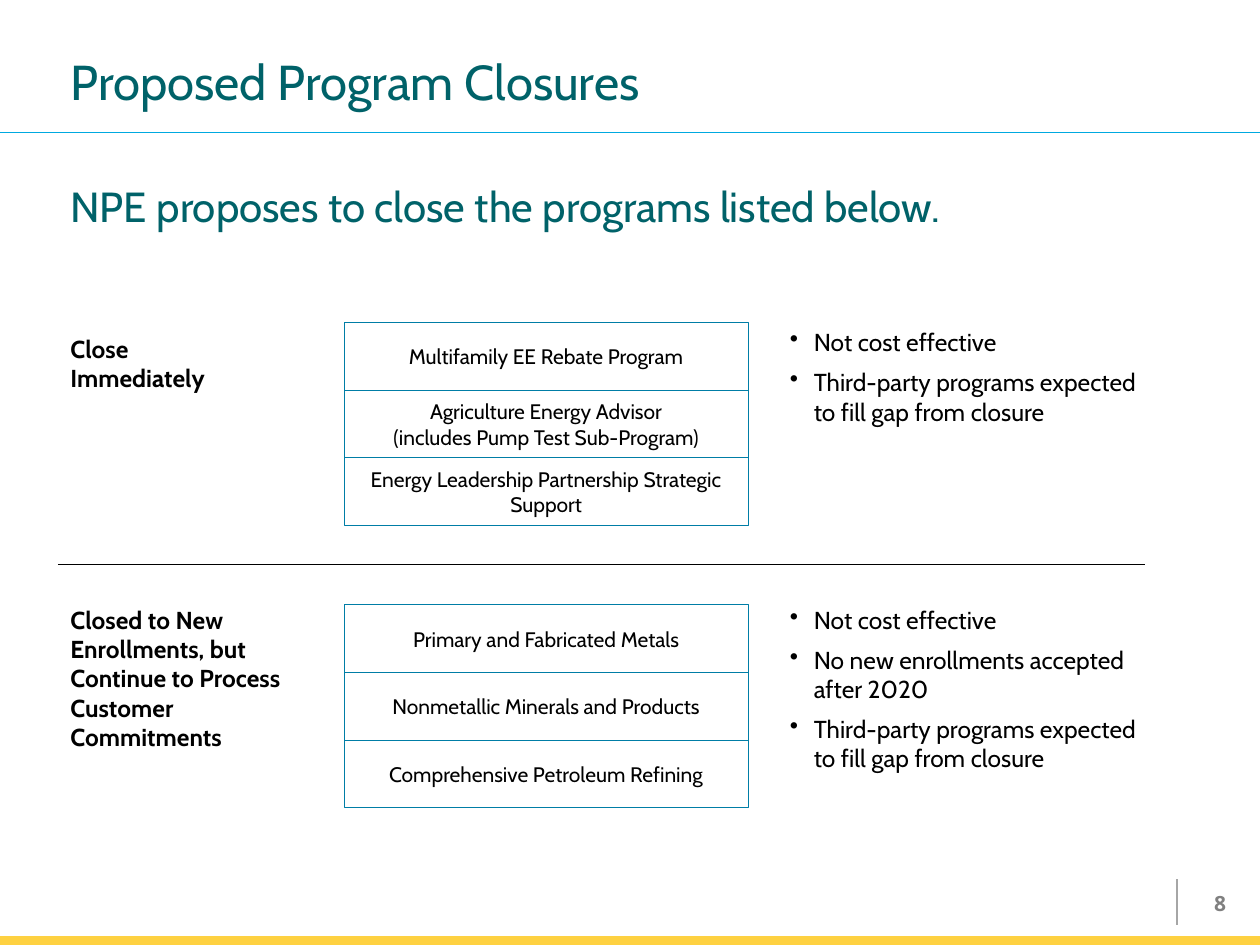
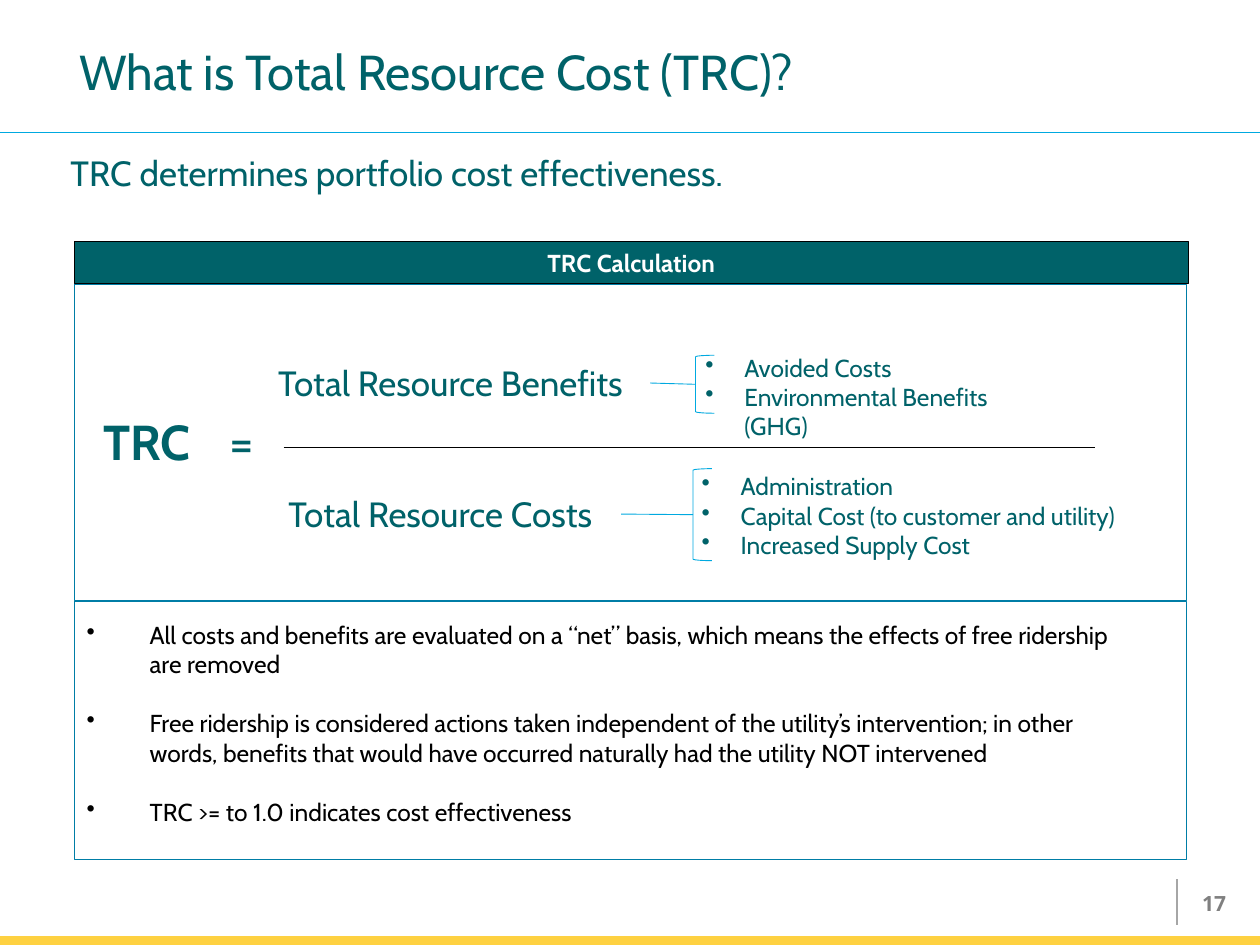
"""Builds two slides: proposed program closures and the total resource cost."""
import pptx
import pptx.util
import pptx.dml.color
import pptx.enum.shapes
import pptx.enum.text
import pptx.oxml.xmlchemy

RGBColor = pptx.dml.color.RGBColor
Inches = pptx.util.Inches
Pt = pptx.util.Pt
KIND = pptx.enum.shapes.MSO_SHAPE
ALIGN = pptx.enum.text.PP_ALIGN
ANCHOR = pptx.enum.text.MSO_ANCHOR
make = pptx.oxml.xmlchemy.OxmlElement

TEAL = RGBColor(0x00, 0x62, 0x69)
BLUE = RGBColor(0x00, 0x7D, 0xA6)
SKY = RGBColor(0x00, 0xA9, 0xE0)
GOLD = RGBColor(0xFE, 0xD1, 0x41)
GREY = RGBColor(0x80, 0x80, 0x80)
SILVER = RGBColor(0xA6, 0xA6, 0xA6)
BLACK = RGBColor(0, 0, 0)
WHITE = RGBColor(255, 255, 255)
FONT = "Cabin"

CLOSE = {
    "title": "Proposed Program Closures",
    "lead": "NPE proposes to close the programs listed below.",
    "page": "8",
    "groups": [
        {
            "label": "Close Immediately",
            "spot": (0.46, 2.6, 1.65, 0.57),
            "top": 2.56,
            "names": [
                "Multifamily EE Rebate Program",
                "Agriculture Energy Advisor\n(includes Pump Test Sub-Program)",
                "Energy Leadership Partnership Strategic Support",
            ],
            "why": [
                "Not cost effective",
                "Third-party programs expected to fill gap from closure",
            ],
            "area": (6.17, 2.55, 2.95, 1.13),
        },
        {
            "label": "Closed to New Enrollments, but Continue to Process "
                     "Customer Commitments",
            "spot": (0.46, 4.75, 2.19, 1.04),
            "top": 4.8,
            "names": [
                "Primary and Fabricated Metals",
                "Nonmetallic Minerals and Products",
                "Comprehensive Petroleum Refining",
            ],
            "why": [
                "Not cost effective",
                "No new enrollments accepted after 2020",
                "Third-party programs expected to fill gap from closure",
            ],
            "area": (6.17, 4.75, 2.95, 1.68),
        },
    ],
}

COST = {
    "title": "What is Total Resource Cost (TRC)?",
    "lead": "TRC determines portfolio cost effectiveness.",
    "page": "17",
    "head": "TRC Calculation",
    "terms": [
        {
            "name": "Total Resource Benefits",
            "spot": (2.11, 2.82, 3.05, 0.44),
            "parts": ["Avoided Costs", "Environmental Benefits (GHG)"],
            "area": (5.5, 2.75, 2.91, 0.57),
            "brace": (5.52, 2.82, 0.15, 0.46),
        },
        {
            "name": "Total Resource Costs",
            "spot": (2.19, 3.86, 2.74, 0.44),
            "parts": [
                "Administration",
                "Capital Cost (to customer and utility)",
                "Increased Supply Cost",
            ],
            "area": (5.47, 3.69, 3.69, 0.81),
            "brace": (5.5, 3.72, 0.15, 0.73),
        },
    ],
    "notes": [
        "All costs and benefits are evaluated on a “net” basis, which means "
        "the effects of free ridership are removed",
        "Free ridership is considered actions taken independent of the "
        "utility’s intervention; in other words, benefits that would have "
        "occurred naturally had the utility NOT intervened",
        "TRC >= to 1.0 indicates cost effectiveness",
    ],
}


def write(shape, text, size, color=BLACK, bold=False, align=ALIGN.LEFT,
          anchor=ANCHOR.TOP, font=FONT, indent=0, before=0, after=0, lines=None):
    frame = shape.text_frame
    frame.text = text
    frame.word_wrap = True
    frame.auto_size = pptx.enum.text.MSO_AUTO_SIZE.NONE
    frame.vertical_anchor = anchor
    for num, para in enumerate(frame.paragraphs):
        if indent:
            props = para._p.get_or_add_pPr()
            props.set("marL", str(Inches(indent)))
            props.set("indent", str(-Inches(indent)))
            mark = make("a:buChar")
            mark.set("char", "•")
            props.append(mark)
        para.alignment = align
        para.space_before = Pt(before if num else 0)
        para.space_after = Pt(after)
        if lines:
            para.line_spacing = lines
        for run in para.runs:
            run.font.name = font
            run.font.size = Pt(size)
            run.font.bold = bold
            run.font.color.rgb = color
    return shape


def label(slide, spot, text, size, **style):
    box = slide.shapes.add_textbox(*map(Inches, spot))
    return write(box, text, size, **style)


def block(slide, spot, fill=None, edge=None, kind=KIND.RECTANGLE):
    shape = slide.shapes.add_shape(kind, *map(Inches, spot))
    shape.shadow.inherit = False
    if fill is None:
        shape.fill.background()
    else:
        shape.fill.solid()
        shape.fill.fore_color.rgb = fill
    if edge is None:
        shape.line.fill.background()
    else:
        shape.line.color.rgb = edge
        shape.line.width = Pt(0.5)
    return shape


def rule(slide, ends, color, width=0.5):
    line = slide.shapes.add_connector(
        pptx.enum.shapes.MSO_CONNECTOR.STRAIGHT, *map(Inches, ends))
    line.line.color.rgb = color
    line.line.width = Pt(width)
    line._element.spPr.append(make("a:effectLst"))
    return line


def start(deck, data, left, top):
    slide = deck.slides.add_slide(deck.slide_layouts[5])
    title = slide.shapes.title
    title.left, title.top = Inches(left), Inches(top)
    title.width, title.height = Inches(8.62), Inches(0.56)
    write(title, data["title"], 28, TEAL, anchor=ANCHOR.MIDDLE, lines=0.9)
    rule(slide, (9.34, 6.98, 9.34, 7.34), SILVER, 1)
    block(slide, (0, 7.43, 10, 0.08), GOLD)
    rule(slide, (0, 1.05, 10, 1.05), SKY)
    label(slide, (9.27, 6.97, 0.56, 0.4), data["page"], 12, color=GREY,
          bold=True, align=ALIGN.RIGHT, anchor=ANCHOR.MIDDLE, font="Open Sans")
    return slide


def lead(slide, data, spot, size, after=0):
    label(slide, spot, data["lead"], size, color=TEAL,
          anchor=ANCHOR.MIDDLE, after=after, lines=0.9)


def closures(deck):
    slide = start(deck, CLOSE, 0.46, 0.39)
    lead(slide, CLOSE, (0.46, 1.26, 9.09, 0.79), 24, 6)
    rule(slide, (0.46, 4.48, 9.09, 4.48), BLACK)
    step = 1.61 / 3
    for group in CLOSE["groups"]:
        label(slide, group["spot"], group["label"], 14, bold=True)
        for row, name in enumerate(group["names"]):
            cell = block(slide, (2.73, group["top"] + row * step, 3.21, step),
                         edge=BLUE)
            write(cell, name, 12, align=ALIGN.CENTER, anchor=ANCHOR.MIDDLE)
        label(slide, group["area"], "\n".join(group["why"]), 14,
              indent=0.19, after=6)


def cost(deck):
    slide = start(deck, COST, 0.53, 0.31)
    lead(slide, COST, (0.46, 1.11, 9.09, 0.56), 20)
    block(slide, (0.59, 2.26, 8.83, 2.51), edge=BLUE)
    block(slide, (0.59, 4.77, 8.83, 2.05), edge=BLUE)
    head = block(slide, (0.59, 1.92, 8.84, 0.33), TEAL, BLACK)
    write(head, COST["head"], 14, WHITE, True, ALIGN.CENTER, ANCHOR.MIDDLE)
    label(slide, (0.72, 3.22, 0.93, 0.57), "TRC", 28, color=TEAL, bold=True)
    label(slide, (1.72, 3.22, 0.47, 0.57), "=", 28, color=TEAL)
    rule(slide, (2.25, 3.55, 8.69, 3.55), BLACK)
    for term in COST["terms"]:
        name = label(slide, term["spot"], term["name"], 20, color=TEAL)
        label(slide, term["area"], "\n".join(term["parts"]), 14,
              color=TEAL, indent=0.31)
        brace = block(slide, term["brace"], edge=SKY, kind=KIND.LEFT_BRACKET)
        link = rule(slide, (0, 0, 1, 1), SKY)
        link.begin_connect(name, 3)
        link.end_connect(brace, 1)
    label(slide, (0.59, 4.87, 8.57, 1.75), "\n".join(COST["notes"]), 14,
          indent=0.5, before=17)


def main():
    deck = pptx.Presentation()
    deck.slide_width, deck.slide_height = Inches(10), Inches(7.5)
    closures(deck)
    cost(deck)
    deck.save("out.pptx")


if __name__ == "__main__":
    main()
